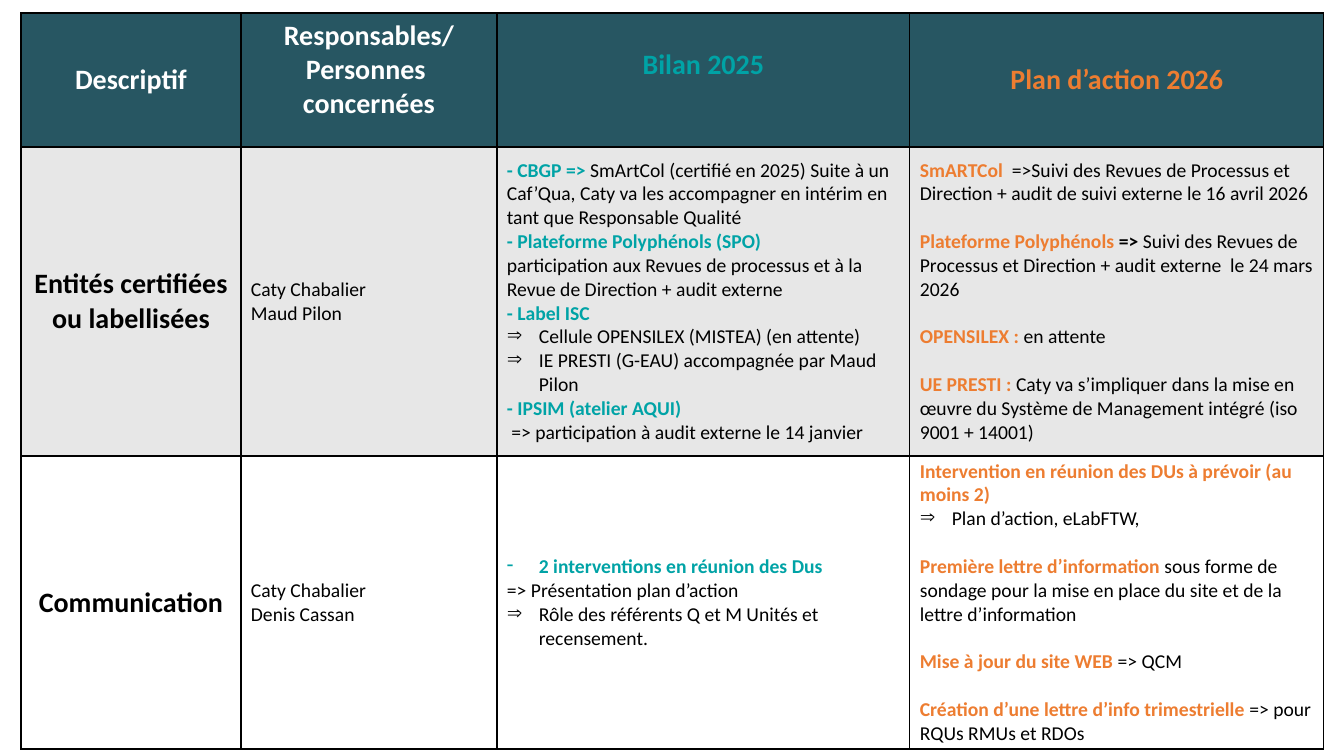
import pptx
import pptx.util
import pptx.dml.color
import pptx.enum.text
import pptx.oxml
import pptx.oxml.ns

EMU_PER_PX = 914400 / 100.8
FONT = "Calibri"
TEAL, ORANGE, BLACK, WHITE = "00A3A6", "ED7D31", "000000", "FFFFFF"
CENTER = pptx.enum.text.PP_ALIGN.CENTER
LEFT = pptx.enum.text.PP_ALIGN.LEFT


def px(length):
    return pptx.util.Emu(round(length * EMU_PER_PX))


def colour(value):
    return pptx.dml.color.RGBColor.from_string(value)


# Page
deck = pptx.Presentation()
deck.slide_width, deck.slide_height = px(1344), px(756)
page = deck.slides.add_slide(deck.slide_layouts[6])

# Wording: each paragraph is (marker, (style, text), ...);
# the marker is a bullet, "gap" for space above, or empty
header = [
    [("", ("head", "Descriptif"))],
    [("", ("head", "Responsables/")), ("", ("head", "Personnes  concernées"))],
    [("", ("head teal", "Bilan 2025"))],
    [("", ("head orange", "Plan d’action 2026"))],
]
certified = [
    [("", ("label", "Entités certifiées ou labellisées"))],
    [("", ("plain", "Caty Chabalier")), ("", ("plain", "Maud Pilon"))],
    [
        ("", ("teal", "- CBGP => "),
         ("plain", "SmArtCol (certifié en 2025) Suite à un Caf’Qua, Caty va les "
                   "accompagner en intérim en tant que Responsable Qualité")),
        ("", ("teal", "- Plateforme Polyphénols (SPO)")),
        ("", ("plain", "participation aux Revues de processus et à la Revue de "
                       "Direction + audit externe")),
        ("", ("teal", "- Label ISC")),
        ("⇒", ("plain", "Cellule OPENSILEX (MISTEA) (en attente)")),
        ("⇒", ("plain", "IE PRESTI (G-EAU) accompagnée par Maud Pilon")),
        ("", ("teal", "- IPSIM (atelier AQUI)")),
        ("", ("plain", " => participation à audit externe le 14 janvier")),
    ],
    [
        ("", ("orange", "SmARTCol  "),
         ("plain", "=>Suivi des Revues de Processus et Direction + audit de suivi "
                   "externe le 16 avril 2026")),
        ("gap", ("orange", "Plateforme Polyphénols "), ("strong", "=>"),
         ("plain", " Suivi des Revues de Processus et Direction + audit externe  "
                   "le 24 mars 2026")),
        ("gap", ("orange", "OPENSILEX : "), ("plain", "en attente")),
        ("gap", ("orange", "UE PRESTI : "),
         ("plain", "Caty va s’impliquer dans la mise en œuvre du Système de "
                   "Management intégré (iso 9001 + 14001)")),
    ],
]
communication = [
    [("", ("label", "Communication"))],
    [("", ("plain", "Caty Chabalier")), ("", ("plain", "Denis Cassan"))],
    [
        ("-", ("teal", "2 interventions en réunion des Dus")),
        ("", ("plain", "=> Présentation plan d’action")),
        ("⇒", ("plain", "Rôle des référents Q et M Unités et recensement.")),
    ],
    [
        ("", ("orange", "Intervention en réunion des DUs à prévoir (au moins 2)")),
        ("⇒", ("plain", "Plan d’action, eLabFTW,")),
        ("gap", ("orange", "Première lettre d’information "),
         ("plain", "sous forme de sondage pour la mise en place du site et de la "
                   "lettre d’information")),
        ("gap", ("orange", "Mise à jour du site WEB "), ("plain", "=> QCM")),
        ("gap", ("orange", "Création d’une lettre d’info trimestrielle "),
         ("plain", "=> pour RQUs RMUs et RDOs")),
    ],
]

# Text styles: size, bold, colour
styles = {
    "head": (20, True, WHITE),
    "head teal": (20, True, TEAL),
    "head orange": (20, True, ORANGE),
    "label": (20, True, BLACK),
    "teal": (14, True, TEAL),
    "orange": (14, True, ORANGE),
    "strong": (14, True, BLACK),
    "plain": (14, False, BLACK),
}

# Table frame
column_widths = [220, 256, 413, 414]
rows = [(134, "275662", header), (309, "E7E7E7", certified), (293, WHITE, communication)]
table = page.shapes.add_table(
    len(rows), len(column_widths), px(21), px(13),
    px(sum(column_widths)), px(sum(row[0] for row in rows))).table
table.first_row = table.horz_banding = False
for column, width in zip(table.columns, column_widths):
    column.width = px(width)

# Extra bottom margin lifts two of the headings
lifts = {(0, 1): 20, (0, 2): 30}

for row_index, (height, fill, contents) in enumerate(rows):
    table.rows[row_index].height = px(height)
    for column_index, paragraphs in enumerate(contents):
        cell = table.cell(row_index, column_index)
        cell_format = {
            "vertical_anchor": pptx.enum.text.MSO_ANCHOR.MIDDLE,
            "margin_left": px(10), "margin_right": px(10), "margin_top": px(3),
            "margin_bottom": px(3 + lifts.get((row_index, column_index), 0)),
        }
        for name, value in cell_format.items():
            setattr(cell, name, value)
        cell.fill.solid()
        cell.fill.fore_color.rgb = colour(fill)

        # Borders
        properties = cell._tc.get_or_add_tcPr()
        for position, side in enumerate(["lnL", "lnR", "lnT", "lnB"]):
            properties.insert(position, pptx.oxml.parse_xml(
                f'<a:{side} {pptx.oxml.ns.nsdecls("a")} w="12700"><a:solidFill>'
                f'<a:srgbClr val="{BLACK}"/></a:solidFill></a:{side}>'))

        # Paragraphs
        frame = cell.text_frame
        for index, (marker, *spans) in enumerate(paragraphs):
            para = frame.add_paragraph() if index else frame.paragraphs[0]
            para.alignment = CENTER if row_index == 0 or column_index == 0 else LEFT
            if marker == "gap":
                para.space_before = pptx.util.Pt(17)
            elif marker:
                bullet = para._p.get_or_add_pPr()
                bullet.set("marL", str(px(32)))
                bullet.set("indent", str(-px(32)))
                bullet.append(pptx.oxml.parse_xml(
                    f'<a:buChar {pptx.oxml.ns.nsdecls("a")} char="{marker}"/>'))
            for style, text in spans:
                size, bold, text_colour = styles[style]
                span = para.add_run()
                span.text = text
                span_format = {"name": FONT, "size": pptx.util.Pt(size), "bold": bold}
                for name, value in span_format.items():
                    setattr(span.font, name, value)
                span.font.color.rgb = colour(text_colour)

deck.save("out.pptx")
